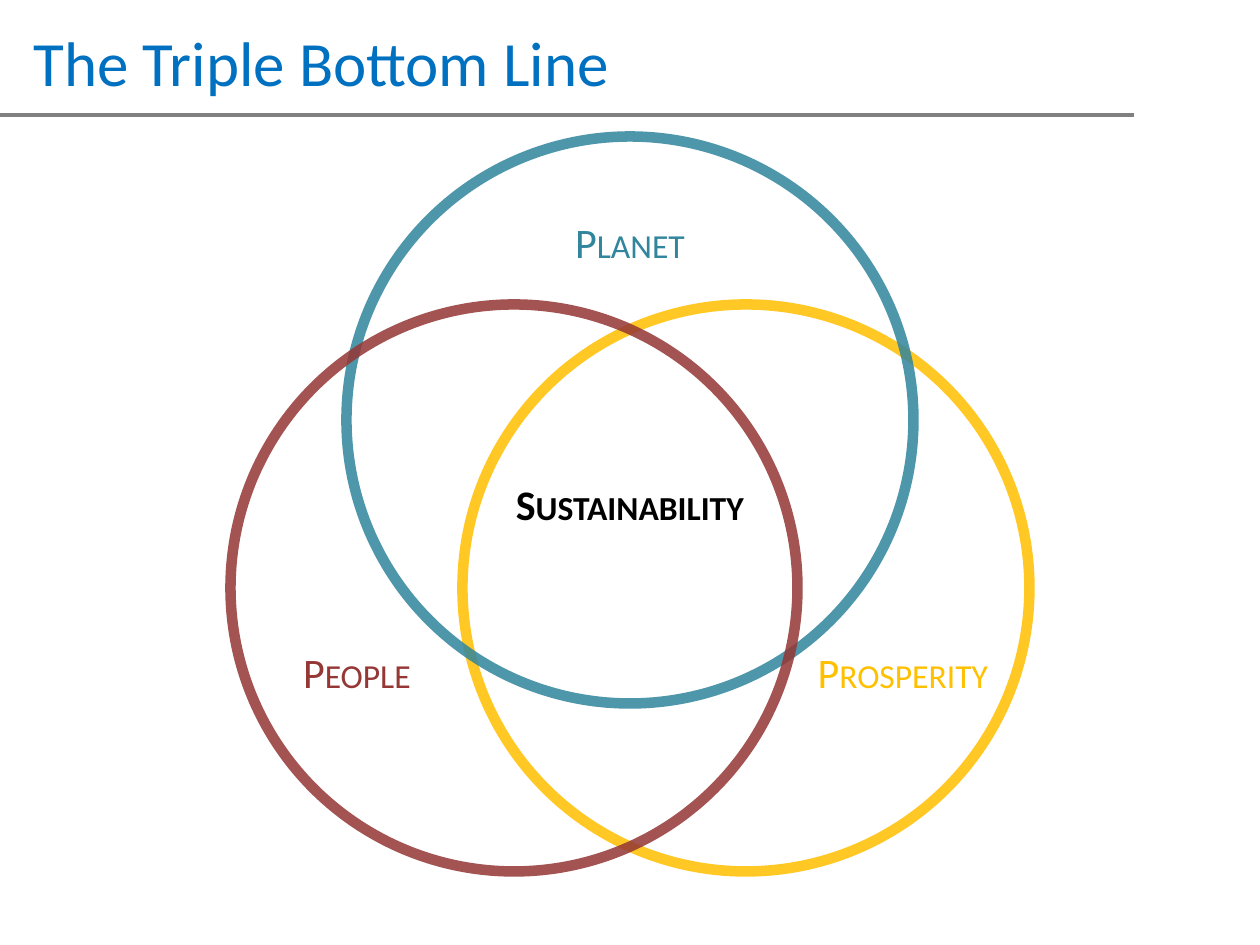
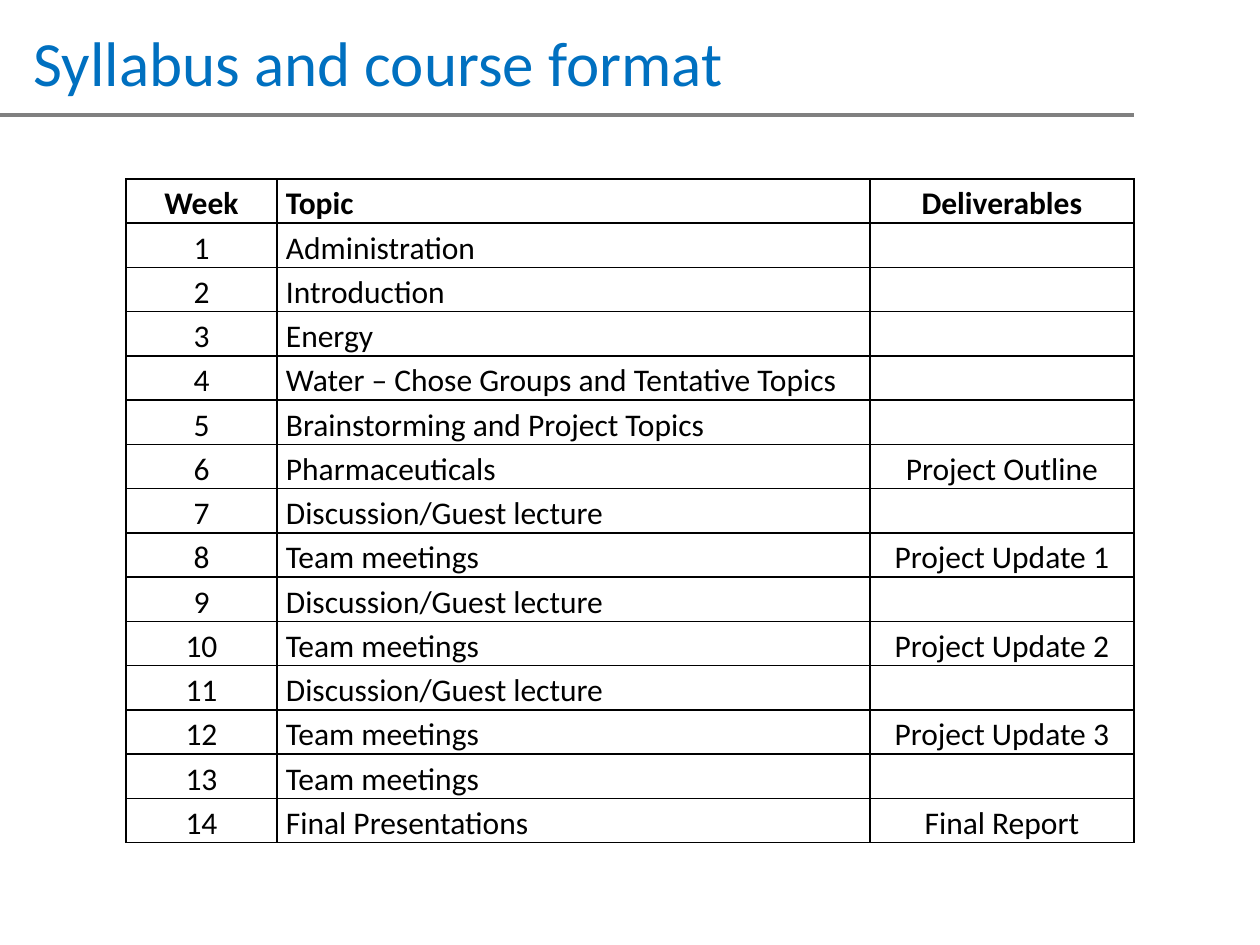
import lxml.etree
import pptx
import pptx.dml.color
import pptx.enum.shapes
import pptx.enum.text
import pptx.oxml.ns
import pptx.util

FONT = "Calibri"
COLOURS = {
    "title": "0070C0",
    "rule": "808080",
    "planet": "31859C",
    "people": "953735",
    "prosperity": "FFC000",
    "text": "000000",
}

VENN_TITLE = "The Triple Bottom Line"
CIRCLE_SIZE = 567
CIRCLE_OPACITY = 85
# colour name, centre x, centre y
CIRCLES = [
    ("prosperity", 746, 588),
    ("planet", 630, 420),
    ("people", 514, 588),
]
# text, colour name, centre x, top, width, bold
LABELS = [
    ("Planet", "planet", 630, 210, 231, False),
    ("People", "people", 357, 640, 231, False),
    ("Prosperity", "prosperity", 903, 640, 252, False),
    ("Sustainability", "text", 630, 472, 347, True),
]
LABEL_HEIGHT = 63

SYLLABUS_TITLE = "Syllabus and course format"
HEADER = ("Week", "Topic", "Deliverables")
WEEKS = [
    ("Administration", ""),
    ("Introduction", ""),
    ("Energy", ""),
    ("Water – Chose Groups and Tentative Topics", ""),
    ("Brainstorming and Project Topics", ""),
    ("Pharmaceuticals", "Project Outline"),
    ("Discussion/Guest lecture", ""),
    ("Team meetings", "Project Update 1"),
    ("Discussion/Guest lecture", ""),
    ("Team meetings", "Project Update 2"),
    ("Discussion/Guest lecture", ""),
    ("Team meetings", "Project Update 3"),
    ("Team meetings", ""),
    ("Final Presentations", "Final Report"),
]
TABLE_LEFT, TABLE_TOP = 126, 179
COLUMN_WIDTHS = (151, 593, 264)
ROW_HEIGHT = 44
CELL_MARGIN = 9

ALIGN = pptx.enum.text.PP_ALIGN
ANCHOR = pptx.enum.text.MSO_ANCHOR


def px(length):
    """Turn pixels, 126 to the inch, into EMU."""
    return pptx.util.Emu(round(length * 914400 / 126))


def rgb(name):
    return pptx.dml.color.RGBColor.from_string(COLOURS[name])


def add_xml(parent, tag, **attributes):
    return lxml.etree.SubElement(parent, pptx.oxml.ns.qn(tag), **attributes)


def format_paragraph(paragraph, size, colour, alignment, bold=False):
    paragraph.alignment = alignment
    for run in paragraph.runs:
        run.font.name = FONT
        run.font.size = pptx.util.Pt(size)
        run.font.bold = bold
        run.font.color.rgb = rgb(colour)


def add_titled_slide(presentation, title_text):
    """Add a slide with the shared rule and title."""
    slide = presentation.slides.add_slide(presentation.slide_layouts[5])
    rule = slide.shapes.add_connector(
        pptx.enum.shapes.MSO_CONNECTOR.STRAIGHT, px(0), px(115), px(1134), px(115)
    )
    rule.line.color.rgb = rgb("rule")
    rule.line.width = pptx.util.Pt(2)
    add_xml(rule.element.spPr, "a:effectLst")

    title = slide.shapes.title
    title.left, title.top, title.width, title.height = px(21), px(6), px(1134), px(110)
    frame = title.text_frame
    frame.text = title_text
    frame.auto_size = pptx.enum.text.MSO_AUTO_SIZE.NONE
    frame.vertical_anchor = ANCHOR.MIDDLE
    format_paragraph(frame.paragraphs[0], 36, "title", ALIGN.LEFT)
    return slide


def add_circle(slide, colour, centre_x, centre_y):
    radius = CIRCLE_SIZE / 2
    circle = slide.shapes.add_shape(
        pptx.enum.shapes.MSO_SHAPE.OVAL,
        px(centre_x - radius), px(centre_y - radius), px(CIRCLE_SIZE), px(CIRCLE_SIZE),
    )
    circle.shadow.inherit = False
    circle.fill.background()
    circle.line.color.rgb = rgb(colour)
    circle.line.width = pptx.util.Pt(6)
    line_colour = circle.element.spPr.find(".//" + pptx.oxml.ns.qn("a:srgbClr"))
    add_xml(line_colour, "a:alpha", val=str(CIRCLE_OPACITY * 1000))


def add_label(slide, text, colour, centre_x, top, width, bold):
    """Add a centred text box in small capitals."""
    label = slide.shapes.add_textbox(
        px(centre_x - width / 2), px(top), px(width), px(LABEL_HEIGHT)
    )
    frame = label.text_frame
    frame.word_wrap = True
    frame.text = text
    paragraph = frame.paragraphs[0]
    format_paragraph(paragraph, 24, colour, ALIGN.CENTER, bold)
    for run in paragraph.runs:
        run.font._element.set("cap", "small")


def format_cell(cell, text, alignment, bold):
    cell.margin_left = cell.margin_right = px(CELL_MARGIN)
    cell.margin_top = cell.margin_bottom = 0
    cell.vertical_anchor = ANCHOR.BOTTOM
    properties = cell._tc.get_or_add_tcPr()
    for side in "LRTB":
        border = add_xml(properties, f"a:ln{side}", w=str(pptx.util.Pt(1)))
        add_xml(add_xml(border, "a:solidFill"), "a:srgbClr", val=COLOURS["text"])
    cell.fill.background()
    cell.text_frame.text = text
    paragraph = cell.text_frame.paragraphs[0]
    paragraph.line_spacing = 1.15
    format_paragraph(paragraph, 18, "text", alignment, bold)


def add_syllabus_table(slide):
    rows = [HEADER] + [(str(week), *entry) for week, entry in enumerate(WEEKS, 1)]
    table = slide.shapes.add_table(
        len(rows), len(HEADER), px(TABLE_LEFT), px(TABLE_TOP),
        px(sum(COLUMN_WIDTHS)), px(ROW_HEIGHT * len(rows)),
    ).table
    table.first_row = table.horz_banding = False
    for column, width in zip(table.columns, COLUMN_WIDTHS):
        column.width = px(width)
    alignments = (ALIGN.CENTER, ALIGN.LEFT, ALIGN.CENTER)
    for row_index, row in enumerate(rows):
        for column_index, text in enumerate(row):
            format_cell(
                table.cell(row_index, column_index), text,
                alignments[column_index], bold=row_index == 0,
            )


def main():
    presentation = pptx.Presentation()
    presentation.slide_width, presentation.slide_height = px(1260), px(945)

    venn_slide = add_titled_slide(presentation, VENN_TITLE)
    for circle in CIRCLES:
        add_circle(venn_slide, *circle)
    for label in LABELS:
        add_label(venn_slide, *label)

    add_syllabus_table(add_titled_slide(presentation, SYLLABUS_TITLE))
    presentation.save("out.pptx")


if __name__ == "__main__":
    main()
